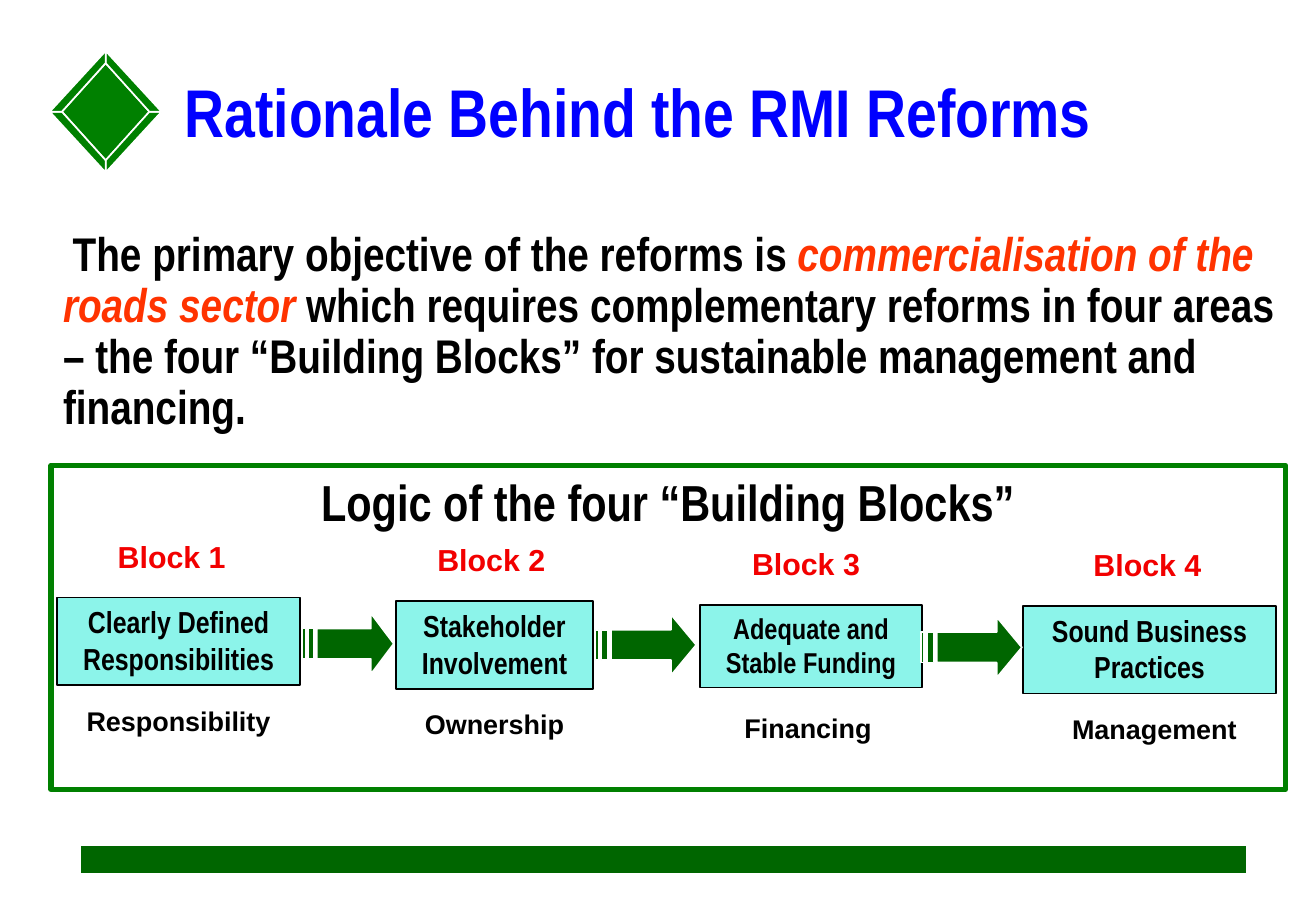
"""Build the slide on the rationale behind the RMI reforms."""
from dataclasses import dataclass
from itertools import product

from pptx import Presentation
from pptx.dml.color import RGBColor
from pptx.enum.shapes import MSO_CONNECTOR, MSO_SHAPE
from pptx.enum.text import MSO_ANCHOR, PP_ALIGN
from pptx.oxml.ns import qn
from pptx.util import Inches, Pt


@dataclass(frozen=True)
class Theme:
    sans: str = "Arial"
    narrow: str = "Arial Narrow"
    white: str = "FFFFFF"
    black: str = "000000"
    green: str = "008000"
    dark_green: str = "006600"
    blue: str = "0000FF"
    orange: str = "FF3300"
    red: str = "F20000"
    aqua: str = "8CF4EA"
    title: int = 40
    heading: int = 30
    body: int = 28
    block: int = 18
    funding: int = 17
    caption: int = 16


T = Theme()
rgb = RGBColor.from_string


def write(s, text, size, color=T.black, font=T.narrow, align=PP_ALIGN.LEFT, anchor=MSO_ANCHOR.TOP):
    tf = s.text_frame
    tf.word_wrap = True
    tf.vertical_anchor = anchor
    tf.text = text
    for p in tf.paragraphs:
        p.alignment = align
        p.font.name, p.font.size, p.font.bold = font, Pt(size), True
        p.font.color.rgb = rgb(color)
    return tf.paragraphs[0]


def outline(shapes, contours, fill):
    first, *others = [[(Inches(x), Inches(y)) for x, y in c] for c in contours]
    fb = shapes.build_freeform(*first[0], scale=1.0)
    fb.add_line_segments(first[1:], close=True)
    for c in others:
        fb.move_to(*c[0])
        fb.add_line_segments(c[1:], close=True)
    s = fb.convert_to_shape()
    s.shadow.inherit = False
    s.fill.solid()
    s.fill.fore_color.rgb = rgb(fill)
    s.line.color.rgb = rgb(T.white)
    s.line.width = Pt(1)


prs = Presentation()
prs.slide_width, prs.slide_height = Inches(10.83), Inches(7.5)
slide = prs.slides.add_slide(prs.slide_layouts[5])
shapes = slide.shapes

title = shapes.title
title.left, title.top, title.width, title.height = Inches(1.42), Inches(0.49), Inches(9.41), Inches(0.92)
p = write(title, "Rationale Behind the RMI Reforms", T.title, T.blue, anchor=MSO_ANCHOR.MIDDLE)
p.line_spacing = 0.9

cx, cy = 0.87, 0.92
inner_x, inner_y, outer_x, outer_y = 0.36, 0.4, 0.46, 0.5
outline(shapes, [[(cx, cy - inner_y), (cx - inner_x, cy), (cx, cy + inner_y), (cx + inner_x, cy)]], T.green)
for sx, sy in product((1, -1), repeat=2):
    facet = [(cx, cy + sy * inner_y), (cx, cy + sy * outer_y),
             (cx + sx * outer_x, cy), (cx + sx * inner_x, cy)]
    outline(shapes, [facet], T.green)

bar = shapes.add_connector(MSO_CONNECTOR.STRAIGHT, Inches(0.67), Inches(7.08), Inches(10.25), Inches(7.08))
bar.line.color.rgb = rgb(T.dark_green)
bar.line.width = Pt(16)
sp_pr = bar._element.spPr
sp_pr.append(sp_pr.makeelement(qn("a:effectLst"), {}))

frame = shapes.add_shape(MSO_SHAPE.RECTANGLE, Inches(0.42), Inches(3.83), Inches(10.16), Inches(2.67))
frame.shadow.inherit = False
frame.fill.background()
frame.line.color.rgb = rgb(T.green)
frame.line.width = Pt(3)
write(frame, "Logic of the four “Building Blocks”", T.heading, align=PP_ALIGN.CENTER)

objective = shapes.add_textbox(Inches(0.42), Inches(1.85), Inches(10.35), Inches(1.78))
p = write(objective, "The primary objective of the reforms is ", T.body)
p.line_spacing = 0.9
p._p.get_or_add_pPr().set("indent", str(Inches(0.08)))
r = p.add_run()
r.text = "commercialisation of the roads sector"
r.font.italic = True
r.font.color.rgb = rgb(T.orange)
r = p.add_run()
r.text = (" which requires complementary reforms in four areas – "
          "the four “Building Blocks” for sustainable management and financing.")

blocks = [
    ("Clearly Defined Responsibilities", T.block, 0.47, 4.92, 2, 0.72, 0.87, "Responsibility", 0.47, 2),
    ("Stakeholder\nInvolvement", T.block, 3.26, 4.95, 1.62, 0.72, 3.5, "Ownership", 3.28, 1.58),
    ("Adequate and Stable Funding", T.funding, 5.76, 4.98, 1.83, 0.68, 6.09, "Financing", 5.69, 1.92),
    ("Sound Business Practices", T.block, 8.42, 4.99, 2.08, 0.72, 8.9, "Management", 8.5, 2),
]
for n, (text, size, x, y, w, h, label_x, caption, caption_x, caption_w) in enumerate(blocks, 1):
    s = shapes.add_shape(MSO_SHAPE.RECTANGLE, Inches(x), Inches(y), Inches(w), Inches(h))
    s.shadow.inherit = False
    s.fill.solid()
    s.fill.fore_color.rgb = rgb(T.aqua)
    s.line.color.rgb = rgb(T.black)
    s.line.width = Pt(1)
    write(s, text, size, align=PP_ALIGN.CENTER)
    label = shapes.add_textbox(Inches(label_x), Inches(y - 0.54), Inches(1.19), Inches(0.4))
    write(label, f"Block {n}", T.block, T.red, T.sans)
    s = shapes.add_textbox(Inches(caption_x), Inches(y + 0.83), Inches(caption_w), Inches(0.37))
    write(s, caption, T.caption, font=T.sans, align=PP_ALIGN.CENTER)

for x, y, w in [(2.49, 5.05, 0.75), (4.9, 5.06, 0.83), (7.58, 5.08, 0.83)]:
    h = 0.5
    top, bottom = y + h / 4, y + h * 3 / 4
    neck, tail = x + w * 3 / 4, x + w * 5 / 32
    contours = [[(neck, y), (neck, top), (tail, top), (tail, bottom),
                 (neck, bottom), (neck, y + h), (x + w, y + h / 2)]]
    for start, end in [(2, 4), (0, 1)]:
        left, right = x + w * start / 32, x + w * end / 32
        contours.append([(left, top), (left, bottom), (right, bottom), (right, top)])
    outline(shapes, contours, T.dark_green)

prs.save("out.pptx")
